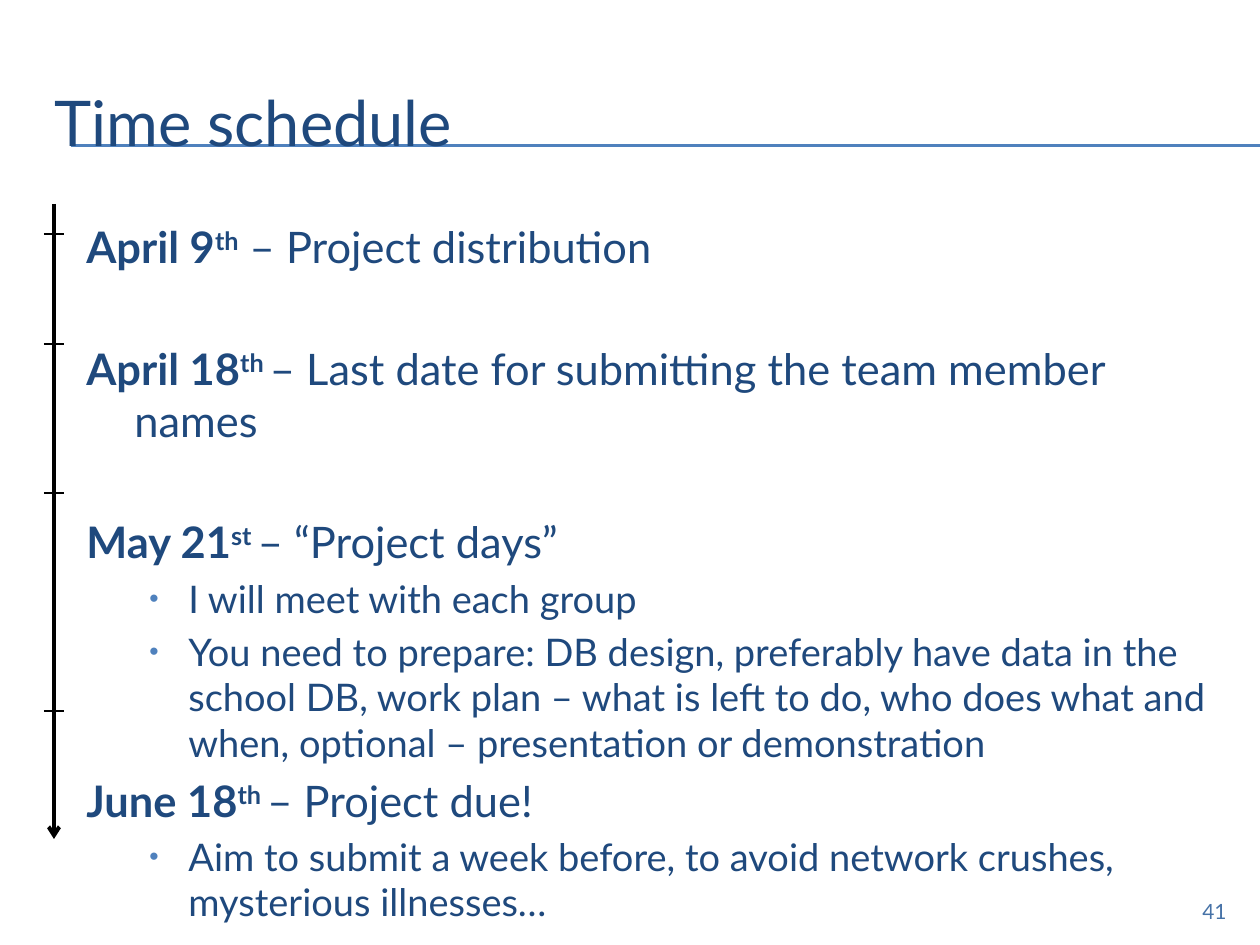
from lxml import etree
from pptx import Presentation
from pptx.dml.color import RGBColor
from pptx.enum.shapes import MSO_CONNECTOR
from pptx.enum.text import MSO_ANCHOR, PP_ALIGN
from pptx.oxml.ns import qn
from pptx.util import Pt

EMU_PER_PX = 914400 / 126
STRAIGHT = MSO_CONNECTOR.STRAIGHT
TOP, MIDDLE = MSO_ANCHOR.TOP, MSO_ANCHOR.MIDDLE
LEFT, RIGHT = PP_ALIGN.LEFT, PP_ALIGN.RIGHT

NAVY = RGBColor(0x1F, 0x49, 0x7D)
BLUE = RGBColor(0x4F, 0x81, 0xBD)
NUMBER_BLUE = RGBColor(0x46, 0x72, 0xA7)
BLACK = RGBColor(0, 0, 0)
WHITE = RGBColor(255, 255, 255)

FONT = "Lato"
DATE_SIZE, DETAIL_SIZE = 24.8, 21.7
DATE_GAP, WIDE_GAP, DETAIL_GAP = 5, 39.7, 4.3

SCHEDULE = [
    ("April 9", "th", " – Project distribution", DATE_GAP, []),
    ("April 18", "th ", "– Last date for submitting the team member names", WIDE_GAP, []),
    ("May 21", "st ", "– “Project days”", WIDE_GAP, [
        "I will meet with each group",
        "You need to prepare: DB design, preferably have data in the school DB, "
        "work plan – what is left to do, who does what and when, "
        "optional – presentation or demonstration",
    ]),
    ("June 18", "th ", "– Project due!", DATE_GAP, [
        "Aim to submit a week before, to avoid network crushes, mysterious illnesses…",
    ]),
]


def px(length):
    return round(length * EMU_PER_PX)


def add_line(page, start, end, color, width, arrow=False):
    line = page.shapes.add_connector(STRAIGHT, *map(px, start + end))
    line.line.color.rgb = color
    line.line.width = Pt(width)
    if arrow:
        etree.SubElement(line.line._get_or_add_ln(), qn("a:tailEnd"), type="arrow")
    etree.SubElement(line._element.spPr, qn("a:effectLst"))


def add_frame(page, box, anchor=TOP):
    frame = page.shapes.add_textbox(*map(px, box)).text_frame
    frame.word_wrap = True
    frame.vertical_anchor = anchor
    return frame


def add_span(para, text, size, color=NAVY, bold=False, raised=False):
    span = para.add_run()
    span.text = text
    span.font.name = FONT
    span.font.size = Pt(size)
    span.font.color.rgb = color
    span.font.bold = bold
    if raised:
        span.font._element.set("baseline", "30000")


def format_para(para, margin, hanging, gap, bullet=False):
    para.alignment = LEFT
    para.space_before = Pt(gap)
    props = para._p.get_or_add_pPr()
    props.set("marL", str(px(margin)))
    props.set("indent", str(-px(hanging)))
    if bullet:
        color = etree.SubElement(props, qn("a:buClr"))
        etree.SubElement(color, qn("a:srgbClr"), val=str(BLUE))
        etree.SubElement(props, qn("a:buSzPct"), val="70000")
        etree.SubElement(props, qn("a:buFont"), typeface="Arial")
        etree.SubElement(props, qn("a:buChar"), char="•")


def add_title(page, box):
    left, top, width, height = box
    for rule_y in (top + 82, top + 83):
        add_line(page, (left + 29, rule_y), (1260, rule_y), BLUE, 0.75)
    para = add_frame(page, box, MIDDLE).paragraphs[0]
    add_span(para, "Time schedule", 36)


def add_schedule(page, box):
    frame = add_frame(page, box)
    para = frame.paragraphs[0]
    for date, suffix, event, gap, details in SCHEDULE:
        if para.runs:
            para = frame.add_paragraph()
        format_para(para, 48, 48, gap)
        add_span(para, date, DATE_SIZE, bold=True)
        add_span(para, suffix, DATE_SIZE, bold=True, raised=True)
        add_span(para, event, DATE_SIZE)
        for detail in details:
            para = frame.add_paragraph()
            para.level = 1
            format_para(para, 102, 39, DETAIL_GAP, bullet=True)
            add_span(para, detail, DETAIL_SIZE)


def add_timeline(page, box):
    left, top, width, height = box
    center = left + width // 2
    add_line(page, (center, top), (center, top + height), BLACK, 2.25, arrow=True)
    for offset in (30, 140, 289, 507):
        add_line(page, (left, top + offset), (left + width, top + offset), BLACK, 1.5)


def add_page_number(page, box):
    para = add_frame(page, box).paragraphs[0]
    para.alignment = RIGHT
    add_span(para, "41", 12, NUMBER_BLUE)


def main():
    deck = Presentation()
    deck.slide_width, deck.slide_height = px(1260), px(945)
    page = deck.slides.add_slide(deck.slide_layouts[6])
    page.background.fill.solid()
    page.background.fill.fore_color.rgb = WHITE
    add_title(page, (42, 63, 1197, 116))
    add_schedule(page, (74, 214, 1146, 624))
    add_page_number(page, (1134, 892, 105, 34))
    add_timeline(page, (44, 204, 20, 635))
    deck.save("out.pptx")


if __name__ == "__main__":
    main()
